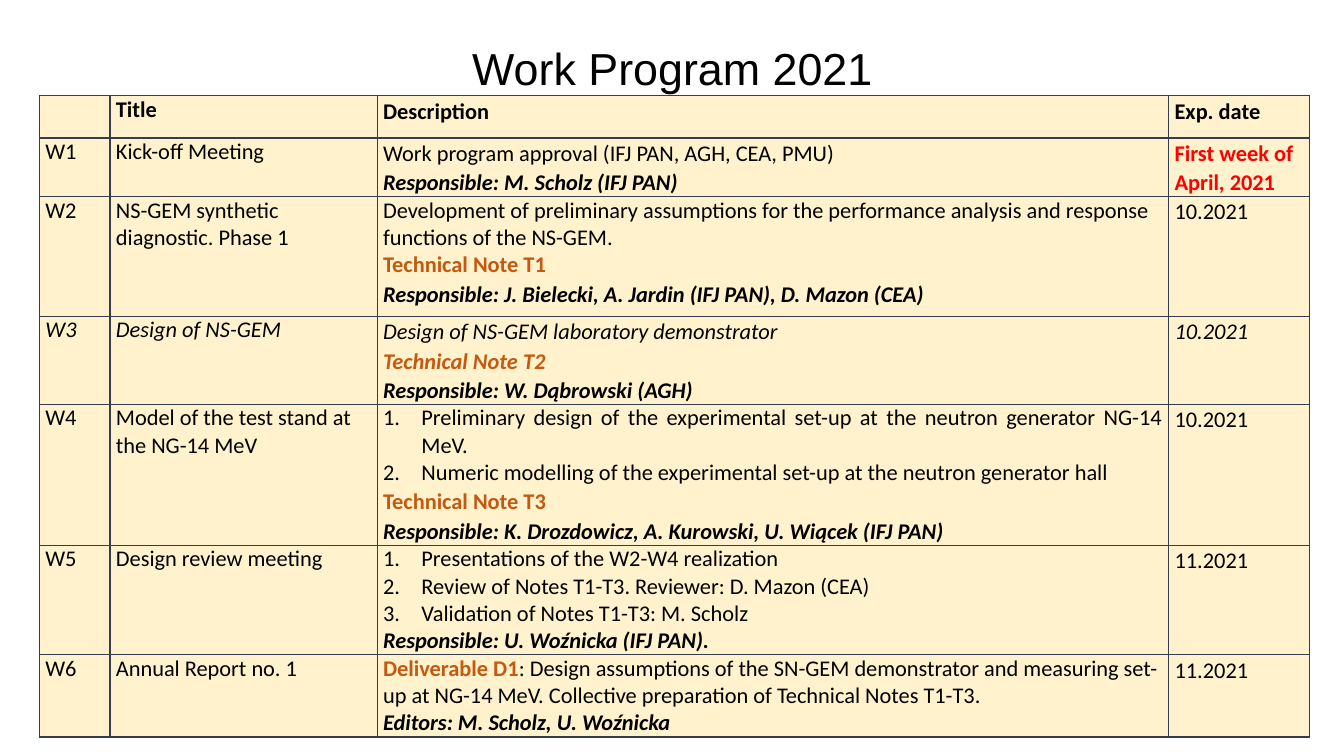
"""Build the Work Program 2021 slide with its schedule table."""
from pptx import Presentation
from pptx.dml.color import RGBColor
from pptx.enum.text import MSO_AUTO_SIZE, PP_ALIGN
from pptx.oxml import parse_xml
from pptx.oxml.ns import nsdecls
from pptx.util import Inches, Pt

CENTER, JUSTIFY = PP_ALIGN.CENTER, PP_ALIGN.JUSTIFY
GROW = MSO_AUTO_SIZE.SHAPE_TO_FIT_TEXT

BLACK = RGBColor(0x00, 0x00, 0x00)
RED = RGBColor(0xFF, 0x00, 0x00)
RUST = RGBColor(0xC4, 0x59, 0x11)
CREAM = RGBColor(0xFF, 0xF2, 0xCC)
SLATE = RGBColor(0x32, 0x3E, 0x4F)

BASE = {"name": "Calibri", "size": Pt(16), "bold": False, "italic": False}
PLAIN = {}
BOLD = {"bold": True}
ITALIC = {"italic": True}
PERSON = {"bold": True, "italic": True}
NOTE = {"bold": True, "color": RUST}
ITALIC_NOTE = {**NOTE, "italic": True}
URGENT = {"bold": True, "color": RED}

TIGHT = {}
LOOSE = {"line_spacing": 1.07}
SPACED = {"line_spacing": 1.07, "space_after": Pt(8)}
ITEM = {"numbered": True}
JUSTIFIED_ITEM = {"numbered": True, "alignment": JUSTIFY}

COLUMN_WIDTHS = (0.7, 2.65, 7.85, 1.4)
ROW_HEIGHTS = (0.42, 0.57, 1.19, 0.85, 1.37, 1.06, 0.81)


def line(text, font=PLAIN, layout=TIGHT):
    """Return a paragraph with a single run."""
    return layout, [(text, font)]


def work_row(code, title, description, date, font=PLAIN, date_font=None):
    """Return the four cells of one work package."""
    date_line = line(date, font if date_font is None else date_font, SPACED)
    return [line(code, font)], [line(title, font)], description, [date_line]


ROWS = (
    ([], [line("Title", BOLD)], [line("Description", BOLD, LOOSE)],
     [line("Exp. date", BOLD, SPACED)]),
    work_row("W1", "Kick-off Meeting", [
        line("Work program approval (IFJ PAN, AGH, CEA, PMU)", PLAIN, LOOSE),
        line("Responsible: M. Scholz (IFJ PAN)", PERSON, LOOSE),
    ], "First week of April, 2021", date_font=URGENT),
    work_row("W2", "NS-GEM synthetic diagnostic. Phase 1", [
        line("Development of preliminary assumptions for the performance "
             "analysis and response functions of the NS-GEM."),
        line("Technical Note T1", NOTE),
        line("Responsible: J. Bielecki, A. Jardin (IFJ PAN), D. Mazon (CEA)",
             PERSON, SPACED),
    ], "10.2021"),
    work_row("W3", "Design of NS-GEM", [
        line("Design of NS-GEM laboratory demonstrator", ITALIC, LOOSE),
        line("Technical Note T2", ITALIC_NOTE, LOOSE),
        line("Responsible: W. Dąbrowski (AGH)", PERSON, LOOSE),
    ], "10.2021", ITALIC),
    work_row("W4", "Model of the test stand at the NG-14 MeV", [
        line("Preliminary design of the experimental set-up at the neutron "
             "generator NG-14 MeV.", PLAIN, JUSTIFIED_ITEM),
        line("Numeric modelling of the experimental set-up at the neutron "
             "generator hall", PLAIN, JUSTIFIED_ITEM),
        line("Technical Note T3", NOTE, LOOSE),
        line("Responsible: K. Drozdowicz, A. Kurowski, U. Wiącek (IFJ PAN)",
             PERSON, LOOSE),
    ], "10.2021"),
    work_row("W5", "Design review meeting", [
        line("Presentations of the W2-W4 realization", PLAIN, ITEM),
        line("Review of Notes T1-T3. Reviewer: D. Mazon (CEA)", PLAIN, ITEM),
        line("Validation of Notes T1-T3: M. Scholz", PLAIN, ITEM),
        line("Responsible: U. Woźnicka (IFJ PAN).", PERSON),
    ], "11.2021"),
    work_row("W6", "Annual Report no. 1", [
        (TIGHT, [
            ("Deliverable D1", NOTE),
            (": Design assumptions of the SN-GEM demonstrator and measuring "
             "set-up at NG-14 MeV. Collective preparation of Technical Notes "
             "T1-T3.", PLAIN),
        ]),
        line("Editors: M. Scholz, U. Woźnicka", PERSON),
    ], "11.2021"),
)


def apply_format(target, values):
    """Set each attribute of the target from a dict."""
    for name, value in values.items():
        setattr(target, name, value)


def format_font(font, values):
    """Apply the base font, its overrides and the colour."""
    values = {**BASE, "color": BLACK, **values}
    font.color.rgb = values.pop("color")
    apply_format(font, values)


def number_paragraph(paragraph):
    """Turn a paragraph into an item of a numbered list."""
    properties = paragraph._p.get_or_add_pPr()
    properties.set("marL", str(Inches(0.38)))
    properties.set("indent", str(Inches(-0.38)))
    properties.append(parse_xml(
        f'<a:buAutoNum {nsdecls("a")} type="arabicPeriod"/>'))


def write_paragraphs(text_frame, paragraphs):
    """Fill a text frame with formatted paragraphs."""
    for index, (layout, runs) in enumerate(paragraphs):
        paragraph = (text_frame.add_paragraph() if index
                     else text_frame.paragraphs[0])
        layout = dict(layout)
        numbered = layout.pop("numbered", False)
        apply_format(paragraph, layout)
        if numbered:
            number_paragraph(paragraph)
        for text, font in runs:
            run = paragraph.add_run()
            run.text = text
            format_font(run.font, font)


def style_cell(cell):
    """Give a cell its margins, borders and fill."""
    apply_format(cell, {
        "margin_left": Inches(0.06), "margin_right": Inches(0.06),
        "margin_top": 0, "margin_bottom": 0})
    properties = cell._tc.get_or_add_tcPr()
    for side in "LRTB":
        properties.append(parse_xml(
            f'<a:ln{side} {nsdecls("a")} w="{Pt(1)}"><a:solidFill>'
            f'<a:srgbClr val="{SLATE}"/></a:solidFill></a:ln{side}>'))
    cell.fill.solid()
    cell.fill.fore_color.rgb = CREAM


def add_program_table(slide):
    """Add the table of work packages."""
    table = slide.shapes.add_table(
        len(ROWS), len(COLUMN_WIDTHS), Inches(0.39), Inches(0.95),
        Inches(sum(COLUMN_WIDTHS)), Inches(sum(ROW_HEIGHTS))).table
    apply_format(table, {"first_row": False, "horz_banding": False})
    for column, width in zip(table.columns, COLUMN_WIDTHS):
        column.width = Inches(width)
    for row, height, contents in zip(table.rows, ROW_HEIGHTS, ROWS):
        row.height = Inches(height)
        for cell, paragraphs in zip(row.cells, contents):
            style_cell(cell)
            write_paragraphs(cell.text_frame, paragraphs)


def add_title(slide, text):
    """Add the centred slide title."""
    shape = slide.shapes.add_textbox(
        Inches(2.17), Inches(0.36), Inches(9), Inches(0.63))
    apply_format(shape.text_frame, {"word_wrap": True, "auto_size": GROW})
    font = {"name": "Arial", "size": Pt(32)}
    write_paragraphs(shape.text_frame,
                     [line(text, font, {"alignment": CENTER})])


def main():
    """Create and save the presentation."""
    presentation = Presentation()
    presentation.slide_width = Inches(13.33)
    presentation.slide_height = Inches(7.5)
    slide = presentation.slides.add_slide(presentation.slide_layouts[6])
    add_program_table(slide)
    add_title(slide, "Work Program 2021")
    presentation.save("out.pptx")


if __name__ == "__main__":
    main()
